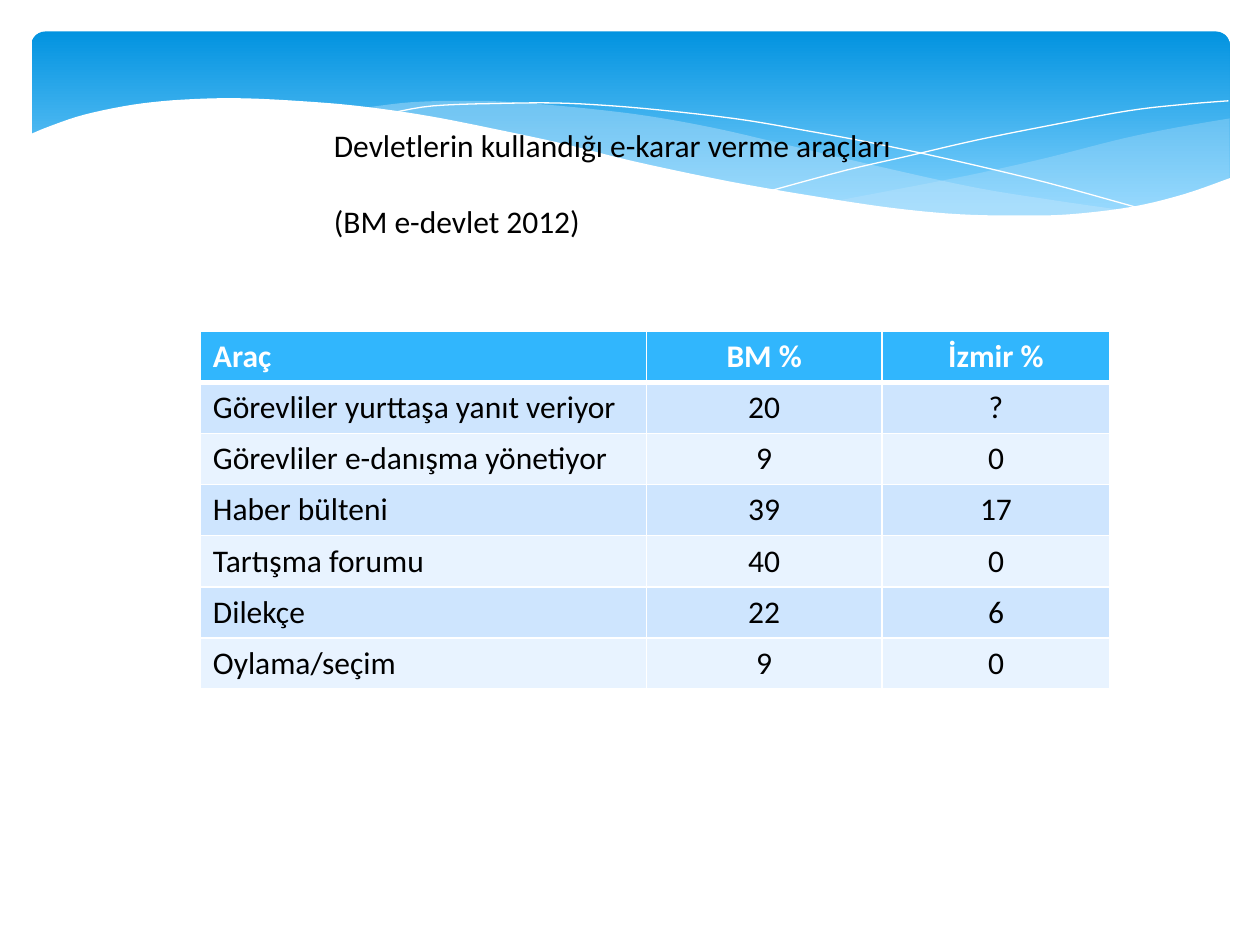
from lxml import etree
from pptx import Presentation
from pptx.dml.color import RGBColor
from pptx.enum.shapes import MSO_SHAPE
from pptx.enum.text import MSO_ANCHOR, MSO_AUTO_SIZE, PP_ALIGN
from pptx.oxml.ns import qn
from pptx.util import Inches, Pt

LEFT, CENTER = PP_ALIGN.LEFT, PP_ALIGN.CENTER
TITLE_ONLY = 5

THEME = {
    "font": "Calibri", "size": Pt(18),
    "text": RGBColor.from_string("000000"),
    "white": RGBColor.from_string("FFFFFF"),
    "header": RGBColor.from_string("31B6FD"),
    "bands": [RGBColor.from_string("CEE5FE"), RGBColor.from_string("E8F3FF")],
    "sky": [(0, RGBColor.from_string("0293E0")), (0.9, RGBColor.from_string("83D3FE"))],
    "mist": RGBColor.from_string("C6E7FC"),
}


def smooth(knots, steps=5):
    """Catmull-Rom curve through the knots, as a list of points."""
    ends = [knots[0], *knots, knots[-1]]
    points = [knots[0]]
    for a, b, c, d in zip(ends, ends[1:], ends[2:], ends[3:]):
        for step in range(1, steps + 1):
            t = step / steps
            points.append(tuple(
                (2 * q + (r - p) * t + (2 * p - 5 * q + 4 * r - s) * t ** 2
                 + (3 * q - p - 3 * r + s) * t ** 3) / 2
                for p, q, r, s in zip(a, b, c, d)))
    return points


def write(paragraph, text, align, **font_values):
    """Fill a paragraph with one formatted run."""
    paragraph.alignment = align
    run = paragraph.add_run()
    run.text = text
    color = font_values.pop("color", THEME["text"])
    values = {"name": THEME["font"], "size": THEME["size"], "bold": False, **font_values}
    for key, value in values.items():
        setattr(run.font, key, value)
    run.font.color.rgb = color


prs = Presentation()
prs.slide_width, prs.slide_height = Inches(10), Inches(7.5)
slide = prs.slides.add_slide(prs.slide_layouts[TITLE_ONLY])
shapes = slide.shapes

# Blue sky panel
sky = shapes.add_shape(MSO_SHAPE.ROUNDED_RECTANGLE,
                       Inches(0.25), Inches(0.25), Inches(9.51), Inches(1.56))
sky.adjustments[0] = 0.07
sky.shadow.inherit = False
sky.line.fill.background()
sky.fill.gradient()
sky.fill.gradient_angle = 270
for stop, (position, color) in zip(sky.fill.gradient_stops, THEME["sky"]):
    stop.position = position
    stop.color.rgb = color

# Waves: (points, fill colour, opacity in percent); no fill means a thin white line
right_wave = (
    smooth([(9.76, 0.94), (9.35, 1.01), (8.91, 1.1), (8.32, 1.25), (7.79, 1.37),
            (7.29, 1.47), (6.61, 1.6)])
    + smooth([(6.61, 1.6), (7.05, 1.65), (7.45, 1.69), (7.92, 1.72), (8.35, 1.72),
              (8.81, 1.67), (9.21, 1.6), (9.49, 1.52), (9.76, 1.41)]))
middle_wave = (
    smooth([(8.93, 1.67), (8.37, 1.59), (7.75, 1.49), (7.06, 1.34), (6.29, 1.16),
            (5.69, 1.02), (5.14, 0.92), (4.65, 0.86), (4.2, 0.82), (3.8, 0.8),
            (3.28, 0.81), (2.86, 0.86)])
    + smooth([(2.86, 0.86), (3.42, 0.94), (4.04, 1.06), (4.49, 1.16), (5.3, 1.35),
              (6.01, 1.5), (6.65, 1.61), (7.22, 1.68), (7.73, 1.72), (8.18, 1.73),
              (8.57, 1.71), (8.93, 1.67)]))
falling_line = smooth([(3.09, 0.9), (3.44, 0.84), (4.01, 0.82), (4.5, 0.82), (5.1, 0.86),
                       (5.82, 0.94), (6.36, 1.03), (6.95, 1.14), (7.6, 1.28),
                       (8.31, 1.45), (9.07, 1.66)])
rising_line = smooth([(6.13, 1.51), (6.72, 1.35), (7.2, 1.24), (7.76, 1.11), (8.36, 0.99),
                      (8.95, 0.88), (9.38, 0.83), (9.75, 0.8)])
white_wave = smooth([(9.77, 1.41), (9.4, 1.54), (8.99, 1.64), (8.5, 1.7), (8.09, 1.71),
                     (7.61, 1.7), (7.08, 1.65), (6.48, 1.56), (5.79, 1.44), (5.03, 1.28),
                     (4.47, 1.14), (3.91, 1.02), (3.4, 0.92), (2.92, 0.85), (2.5, 0.81),
                     (1.93, 0.78), (1.46, 0.79), (1.06, 0.83), (0.67, 0.91), (0.4, 1),
                     (0.23, 1.07)]) + [(0.23, 2.24), (9.77, 2.24)]

for points, color, opacity in [
    (right_wave, THEME["mist"], 29),
    (middle_wave, THEME["mist"], 40),
    (falling_line, None, 100),
    (rising_line, None, 100),
    (white_wave, THEME["white"], 100),
]:
    corners = [(Inches(x), Inches(y)) for x, y in points]
    builder = shapes.build_freeform(*corners[0])
    builder.add_line_segments(corners[1:], close=color is not None)
    wave = builder.convert_to_shape()
    wave.shadow.inherit = False
    if color is None:
        wave.fill.background()
        wave.line.color.rgb = THEME["white"]
        wave.line.width = Pt(0)
        continue
    wave.line.fill.background()
    wave.fill.solid()
    wave.fill.fore_color.rgb = color
    if opacity < 100:
        tone = wave._element.spPr.find(f"{qn('a:solidFill')}/{qn('a:srgbClr')}")
        etree.SubElement(tone, qn("a:alpha"), val=str(opacity * 1000))

# Table of decision-making tools
ROWS = [
    ("Araç", "BM %", "İzmir %"),
    ("Görevliler yurttaşa yanıt veriyor", "20", "?"),
    ("Görevliler e-danışma yönetiyor", "9", "0"),
    ("Haber bülteni", "39", "17"),
    ("Tartışma forumu", "40", "0"),
    ("Dilekçe", "22", "6"),
    ("Oylama/seçim", "9", "0"),
]
tools = shapes.add_table(len(ROWS), 3, Inches(1.59), Inches(2.63),
                         Inches(7.22), Inches(2.84)).table
for column, width in zip(tools.columns, (3.54, 1.87, 1.81)):
    column.width = Inches(width)

for r, row in enumerate(ROWS):
    is_header = r == 0
    for c, text in enumerate(row):
        cell = tools.cell(r, c)
        write(cell.text_frame.paragraphs[0], text, CENTER if c else LEFT, bold=is_header,
              color=THEME["white"] if is_header else THEME["text"])
        # White rules, thicker under the header
        widths = {"L": 1, "R": 1, "T": 3 if r == 1 else 1, "B": 3 if is_header else 1}
        for side, width in widths.items():
            rule = etree.SubElement(cell._tc.get_or_add_tcPr(), qn(f"a:ln{side}"),
                                    w=str(Pt(width)))
            rule_fill = etree.SubElement(rule, qn("a:solidFill"))
            etree.SubElement(rule_fill, qn("a:srgbClr"), val=str(THEME["white"]))
        cell.fill.solid()
        cell.fill.fore_color.rgb = THEME["header"] if is_header else THEME["bands"][(r - 1) % 2]

# Title, brought in front of the waves
title = shapes.title
shapes._spTree.append(title._element)
for key, value in {"left": 2.55, "top": 0.95, "width": 5.54, "height": 1.31}.items():
    setattr(title, key, Inches(value))
frame = title.text_frame
for key, value in {"word_wrap": True, "auto_size": MSO_AUTO_SIZE.NONE,
                   "vertical_anchor": MSO_ANCHOR.TOP}.items():
    setattr(frame, key, value)
heading = frame.paragraphs[0]
write(heading, "Devletlerin kullandığı e-karar verme araçları", LEFT)
heading.space_after = Pt(22)
write(frame.add_paragraph(), "(BM e-devlet 2012)", LEFT)

prs.save("out.pptx")
